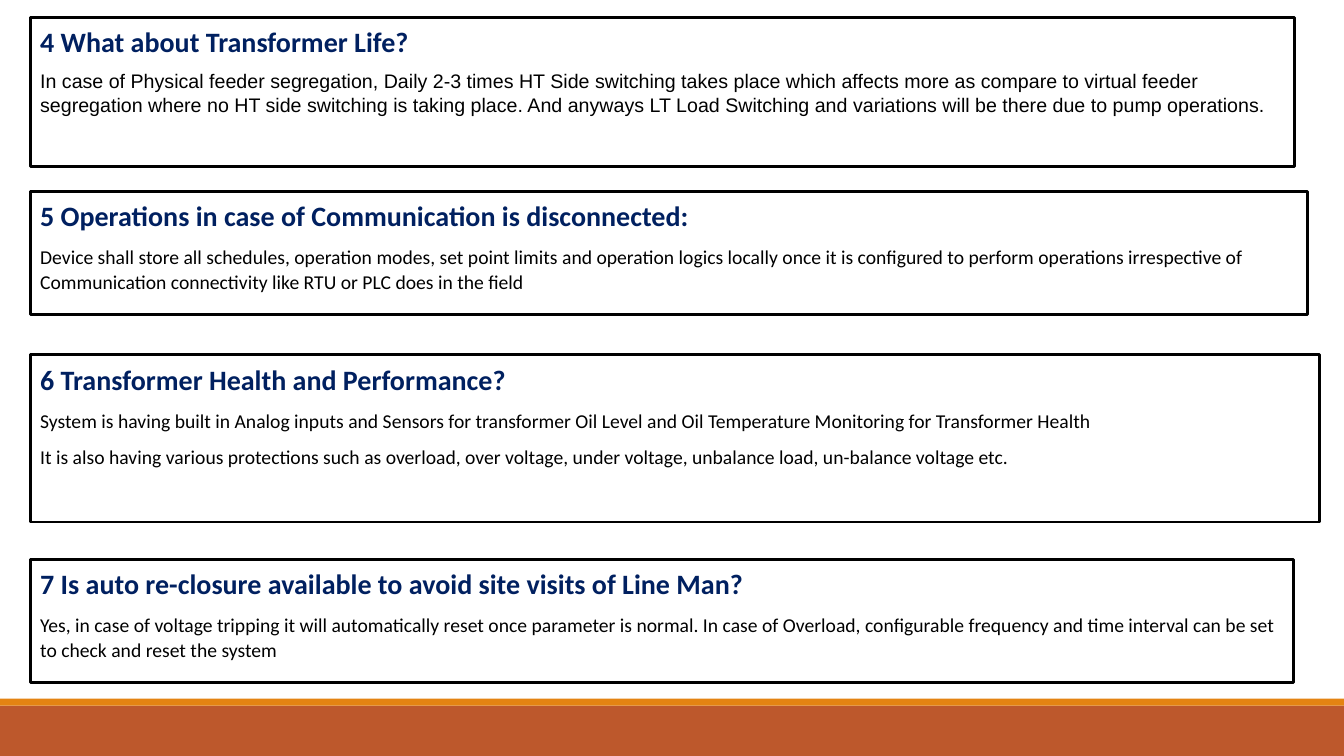
from dataclasses import dataclass

import pptx
import pptx.dml.color
import pptx.enum.shapes
import pptx.enum.text
import pptx.util


@dataclass(frozen=True)
class Theme:
    white: str = "FFFFFF"
    ink: str = "000000"
    heading: str = "002060"
    stripe: str = "E48312"
    footer: str = "BD582C"
    font: str = "Calibri"
    alt_font: str = "Arial"
    heading_size: int = 20
    body_size: int = 14
    border: int = 2
    line_spacing: float = 1.07
    space_after: int = 8


class Deck:
    """Draws on one slide; lengths are percentages of the slide's size."""

    def __init__(self, prs, theme):
        self.prs = prs
        self.theme = theme
        self.slide = prs.slides.add_slide(prs.slide_layouts[6])

    def rect(self, left, top, width, height, fill, border=None):
        w, h = self.prs.slide_width / 100, self.prs.slide_height / 100
        sp = self.slide.shapes.add_shape(
            pptx.enum.shapes.MSO_SHAPE.RECTANGLE,
            round(left * w), round(top * h), round(width * w), round(height * h))
        sp.shadow.inherit = False
        sp.fill.solid()
        sp.fill.fore_color.rgb = pptx.dml.color.RGBColor.from_string(fill)
        if border:
            sp.line.color.rgb = pptx.dml.color.RGBColor.from_string(border)
            sp.line.width = pptx.util.Pt(self.theme.border)
        else:
            sp.line.fill.background()
        return sp

    def paragraph(self, p, text, size, color, font, bold=False, spaced=True):
        p.text = text
        p.alignment = pptx.enum.text.PP_ALIGN.LEFT
        if spaced:
            p.line_spacing = self.theme.line_spacing
            p.space_after = pptx.util.Pt(self.theme.space_after)
        p.font.name = font
        p.font.size = pptx.util.Pt(size)
        p.font.bold = bold
        p.font.color.rgb = pptx.dml.color.RGBColor.from_string(color)

    def card(self, top, width, height, heading, body, font=None, spaced=True):
        t = self.theme
        tf = self.rect(2.25, top, width, height, t.white, t.ink).text_frame
        tf.word_wrap = True
        tf.vertical_anchor = pptx.enum.text.MSO_ANCHOR.TOP
        self.paragraph(tf.paragraphs[0], heading, t.heading_size, t.heading,
                       t.font, bold=True)
        for text in body:
            self.paragraph(tf.add_paragraph(), text, t.body_size, t.ink,
                           font or t.font, spaced=spaced)

    def footer(self):
        self.rect(0, 93.33, 100, 6.67, self.theme.footer)
        self.rect(0, 92.4, 100, 0.93, self.theme.stripe)


def main():
    prs = pptx.Presentation()
    prs.slide_width = pptx.util.Inches(13.33)
    prs.slide_height = pptx.util.Inches(7.5)
    theme = Theme()
    deck = Deck(prs, theme)

    deck.footer()
    deck.card(
        2.27, 94.07, 19.73, "4 What about Transformer Life?",
        ["In case of Physical feeder segregation, Daily 2-3 times HT Side switching "
         "takes place which affects more as compare to virtual feeder segregation "
         "where no HT side switching is taking place. And anyways LT Load Switching "
         "and variations will be there due to pump operations."],
        font=theme.alt_font, spaced=False)
    deck.card(
        25.33, 95.05, 16.27, "5 Operations in case of Communication is disconnected:",
        ["Device shall store all schedules, operation modes, set point limits and "
         "operation logics locally once it is configured to perform operations "
         "irrespective of Communication connectivity like RTU or PLC does in the field"])
    deck.card(
        46.93, 95.95, 22.13, "6 Transformer Health and Performance?",
        ["System is having built in Analog inputs and Sensors for transformer Oil "
         "Level and Oil Temperature Monitoring for Transformer Health",
         "It is also having various protections such as overload, over voltage, "
         "under voltage, unbalance load, un-balance voltage etc."])
    deck.card(
        74, 94, 16.27, "7 Is auto re-closure available to avoid site visits of Line Man?",
        ["Yes, in case of voltage tripping it will automatically reset once parameter "
         "is normal. In case of Overload, configurable frequency and time interval "
         "can be set to check and reset the system"])

    prs.save("out.pptx")


if __name__ == "__main__":
    main()
